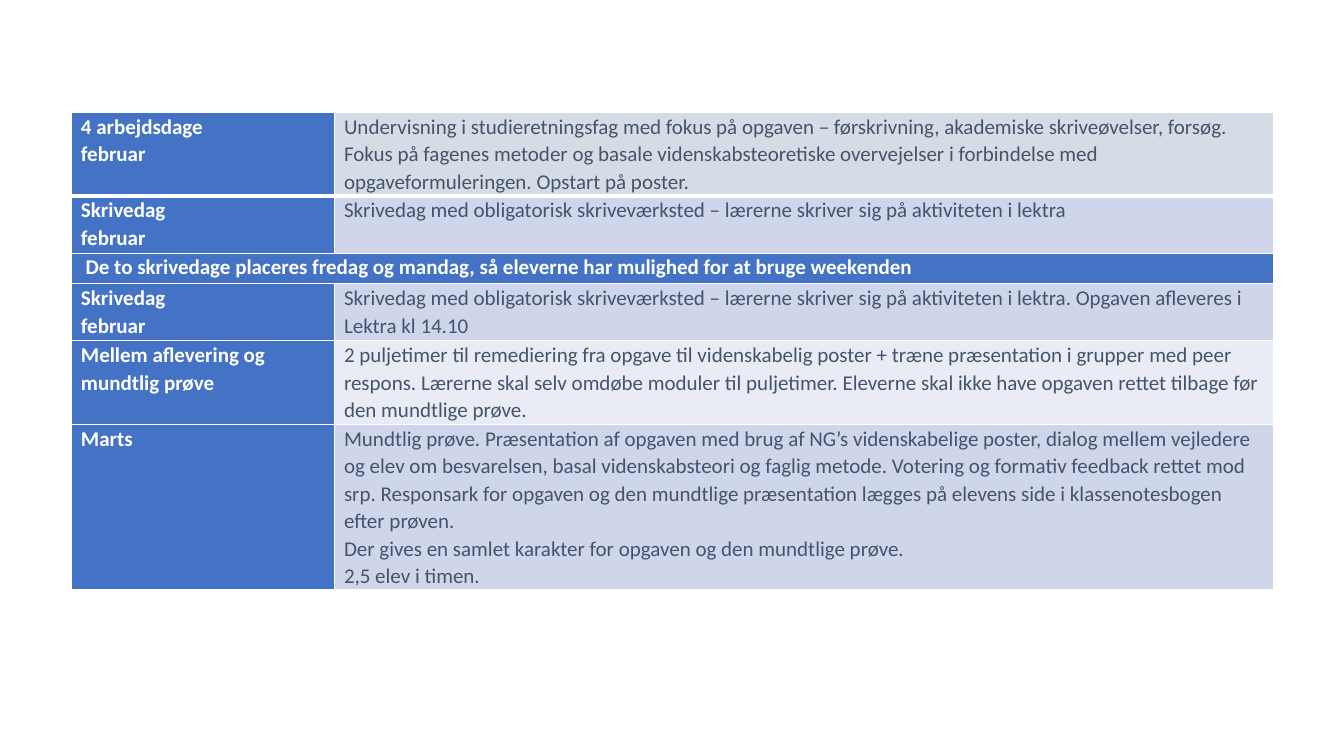
from dataclasses import dataclass

from lxml import etree
from pptx import Presentation
from pptx.dml.color import RGBColor
from pptx.oxml.ns import qn
from pptx.util import Cm, Pt

# Content: (period lines, activity paragraphs, activity fill, row height in cm)
# A row without activities spans both columns.
PLAN = [
    (["4 arbejdsdage", "februar"],
     ["Undervisning i studieretningsfag med fokus på opgaven – førskrivning, "
      "akademiske skriveøvelser, forsøg. Fokus på fagenes metoder og basale "
      "videnskabsteoretiske overvejelser i forbindelse med opgaveformuleringen. "
      "Opstart på poster."],
     "opening", 2.1),
    (["Skrivedag", "februar"],
     ["Skrivedag med obligatorisk skriveværksted – lærerne skriver sig på "
      "aktiviteten i lektra"],
     "dark_band", 1.44),
    ([" De to skrivedage placeres fredag og mandag, så eleverne har mulighed "
      "for at bruge weekenden"],
     [], "period", 0.77),
    (["Skrivedag", "februar"],
     ["Skrivedag med obligatorisk skriveværksted – lærerne skriver sig på "
      "aktiviteten i lektra. Opgaven afleveres i Lektra kl 14.10"],
     "dark_band", 1.44),
    (["Mellem aflevering og mundtlig prøve"],
     ["2 puljetimer til remediering fra opgave til videnskabelig poster + træne "
      "præsentation i grupper med peer respons. Lærerne skal selv omdøbe moduler "
      "til puljetimer. Eleverne skal ikke have opgaven rettet tilbage før den "
      "mundtlige prøve."],
     "light_band", 2.1),
    (["Marts"],
     ["Mundtlig prøve. Præsentation af opgaven med brug af NG’s videnskabelige "
      "poster, dialog mellem vejledere og elev om besvarelsen, basal "
      "videnskabsteori og faglig metode. Votering og formativ feedback rettet "
      "mod srp. Responsark for opgaven og den mundtlige præsentation lægges på "
      "elevens side i klassenotesbogen efter prøven.",
      "Der gives en samlet karakter for opgaven og den mundtlige prøve.",
      "2,5 elev i timen."],
     "dark_band", 4.12),
]
COLUMN_WIDTHS = (6.63, 23.67)
TABLE_LEFT, TABLE_TOP = 1.79, 2.84


@dataclass(frozen=True)
class Theme:
    font: str = "Calibri"
    size: float = 15
    line_spacing: float = 1.07
    period: str = "4472C4"
    period_text: str = "FFFFFF"
    activity_text: str = "44546A"
    opening: str = "D6DCE5"
    dark_band: str = "CFD5EA"
    light_band: str = "E9EBF5"
    border: str = "FFFFFF"
    thin: float = 1
    thick: float = 3


THEME = Theme()
CELL_FORMAT = {"margin_left": Cm(0.25), "margin_right": Cm(0.25),
               "margin_top": 0, "margin_bottom": 0}


def set_borders(cell, widths):
    """Draw the four sides; they must precede the fill in the cell properties."""
    properties = cell._tc.get_or_add_tcPr()
    for position, (side, width) in enumerate(widths.items()):
        line = etree.Element(qn(f"a:ln{side}"), w=str(Pt(width)))
        fill = etree.SubElement(line, qn("a:solidFill"))
        etree.SubElement(fill, qn("a:srgbClr"), val=THEME.border)
        properties.insert(position, line)


def fill_cell(cell, paragraphs, fill, color, bold):
    for name, value in CELL_FORMAT.items():
        setattr(cell, name, value)
    cell.fill.solid()
    cell.fill.fore_color.rgb = RGBColor.from_string(fill)
    cell.text_frame.text = "\n".join(paragraphs)
    font_format = {"name": THEME.font, "size": Pt(THEME.size), "bold": bold}
    for paragraph in cell.text_frame.paragraphs:
        paragraph.line_spacing = THEME.line_spacing
        # Paragraph font also sizes the empty merged cell
        fonts = [paragraph.font] + [run.font for run in paragraph.runs]
        for font in fonts:
            for name, value in font_format.items():
                setattr(font, name, value)
            font.color.rgb = RGBColor.from_string(color)


def main():
    presentation = Presentation()
    presentation.slide_width, presentation.slide_height = Cm(33.87), Cm(19.05)
    slide = presentation.slides.add_slide(presentation.slide_layouts[6])

    # Table grid
    plan_table = slide.shapes.add_table(
        len(PLAN), len(COLUMN_WIDTHS), Cm(TABLE_LEFT), Cm(TABLE_TOP),
        Cm(sum(COLUMN_WIDTHS)), Cm(sum(row[-1] for row in PLAN))).table
    for column, width in zip(plan_table.columns, COLUMN_WIDTHS):
        column.width = Cm(width)

    # Rows: period on the left, activities on the right
    for index, (period, activities, band, height) in enumerate(PLAN):
        plan_table.rows[index].height = Cm(height)
        period_cell, activity_cell = plan_table.rows[index].cells
        fill_cell(period_cell, period, THEME.period, THEME.period_text, True)
        fill_cell(activity_cell, activities, getattr(THEME, band),
                  THEME.activity_text, False)
        # A thick rule sets the first row apart
        widths = {"L": THEME.thin, "R": THEME.thin,
                  "T": THEME.thick if index == 1 else THEME.thin,
                  "B": THEME.thick if index == 0 else THEME.thin}
        for cell in (period_cell, activity_cell):
            set_borders(cell, widths)
        if not activities:
            period_cell.merge(activity_cell)

    presentation.save("out.pptx")


if __name__ == "__main__":
    main()
